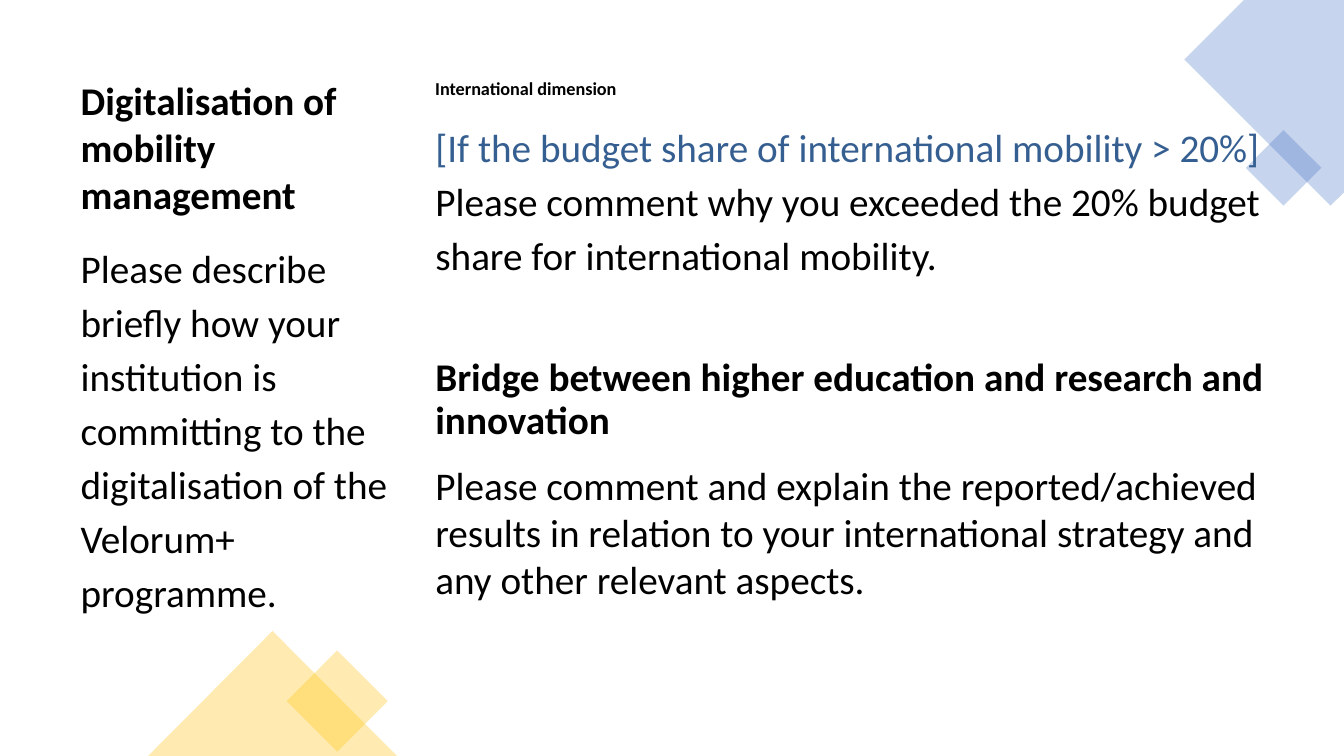
from lxml import etree
from pptx import Presentation
from pptx.dml.color import RGBColor
from pptx.enum.shapes import MSO_SHAPE
from pptx.enum.text import MSO_ANCHOR, MSO_AUTO_SIZE, PP_ALIGN
from pptx.oxml.ns import qn
from pptx.util import Pt

RECT = MSO_SHAPE.RECTANGLE
PEAK = MSO_SHAPE.ISOSCELES_TRIANGLE
TOP = MSO_ANCHOR.TOP
FIXED = MSO_AUTO_SIZE.NONE
LEFT = PP_ALIGN.LEFT

BLACK = RGBColor(0x00, 0x00, 0x00)
NAVY = RGBColor(0x36, 0x5F, 0x91)
BLUE = RGBColor(0x44, 0x72, 0xC4)
GOLD = RGBColor(0xFF, 0xC0, 0x00)
FONT = "Calibri"
ALPHA = 30000

SIDE = (50.4, 247.7)
MAIN = (303.8, 605.5)

BLOCKS = [
    (0, SIDE, 50.8, 109.4, 28, True, 1.0, 0, 6,
     [("Digitalisation of mobility management", BLACK)]),
    (2, SIDE, 165.6, 323.3, 28, False, 1.15, 6, 6,
     [("Please describe briefly how your institution is committing to the "
       "digitalisation of the Velorum+ programme.", BLACK)]),
    (None, MAIN, 50.8, 23, 13, True, 1.05, 12, 12,
     [("International dimension", BLACK)]),
    (1, MAIN, 79.2, 167, 28, False, 1.15, 0, 10,
     [("[If the budget share of international mobility > 20%] ", NAVY),
      ("Please comment why you exceeded the 20% budget share for "
       "international mobility.", BLACK)]),
    (3, MAIN, 252, 68.4, 28, True, 0.9, 0, 6,
     [("Bridge between higher education and research and innovation", BLACK)]),
    (4, MAIN, 326, 163.4, 28, False, 1.0, 0, 6,
     [("Please comment and explain the reported/achieved results in relation "
       "to your international strategy and any other relevant aspects.", BLACK)]),
]

CORNER = [(960, 0), (888.5, 0), (846, 42.5), (950.4, 146.9), (960, 137.5)]
DECOR = [
    (RECT, 897.8, 100.8, 38.2, 38.2, 315, BLUE),
    (RECT, 215.3, 475.2, 51.1, 51.1, 45, GOLD),
    (PEAK, 105.8, 450.7, 177.8, 89.3, 0, GOLD),
]


def tint(shape, color):
    shape.shadow.inherit = False
    shape.line.fill.background()
    shape.fill.solid()
    shape.fill.fore_color.rgb = color
    tone = shape.element.spPr.find(qn("a:solidFill"))[0]
    etree.SubElement(tone, qn("a:alpha")).set("val", str(ALPHA))


def write(box, size, bold, lines, before, after, runs):
    frame = box.text_frame
    frame.word_wrap = True
    frame.auto_size = FIXED
    frame.vertical_anchor = TOP
    para = frame.paragraphs[0]
    para.alignment = LEFT
    para.line_spacing = lines
    para.space_before = Pt(before)
    para.space_after = Pt(after)
    props = box.element.find(".//" + qn("a:pPr"))
    props.set("marL", "0")
    props.set("indent", "0")
    etree.SubElement(props, qn("a:buNone"))
    for text, color in runs:
        run = para.add_run()
        run.text = text
        run.font.name = FONT
        run.font.size = Pt(size)
        run.font.bold = bold
        run.font.color.rgb = color


def main():
    deck = Presentation()
    deck.slide_width, deck.slide_height = Pt(960), Pt(540)
    slide = deck.slides.add_slide(deck.slide_layouts[4])
    shapes = slide.shapes
    slots = {p.placeholder_format.idx: p for p in slide.placeholders}

    edge = shapes.build_freeform(*map(Pt, CORNER[0]))
    edge.add_line_segments([(Pt(x), Pt(y)) for x, y in CORNER[1:]])
    tint(edge.convert_to_shape(), BLUE)
    for kind, x, y, wide, high, turn, color in DECOR:
        shape = shapes.add_shape(kind, Pt(x), Pt(y), Pt(wide), Pt(high))
        shape.rotation = turn
        tint(shape, color)

    for slot, (left, wide), top, high, *style in BLOCKS:
        area = Pt(left), Pt(top), Pt(wide), Pt(high)
        if slot is None:
            box = shapes.add_textbox(*area)
        else:
            box = slots[slot]
            box.left, box.top, box.width, box.height = area
            shapes.element.append(box.element)
        write(box, *style)

    deck.save("out.pptx")


if __name__ == "__main__":
    main()
